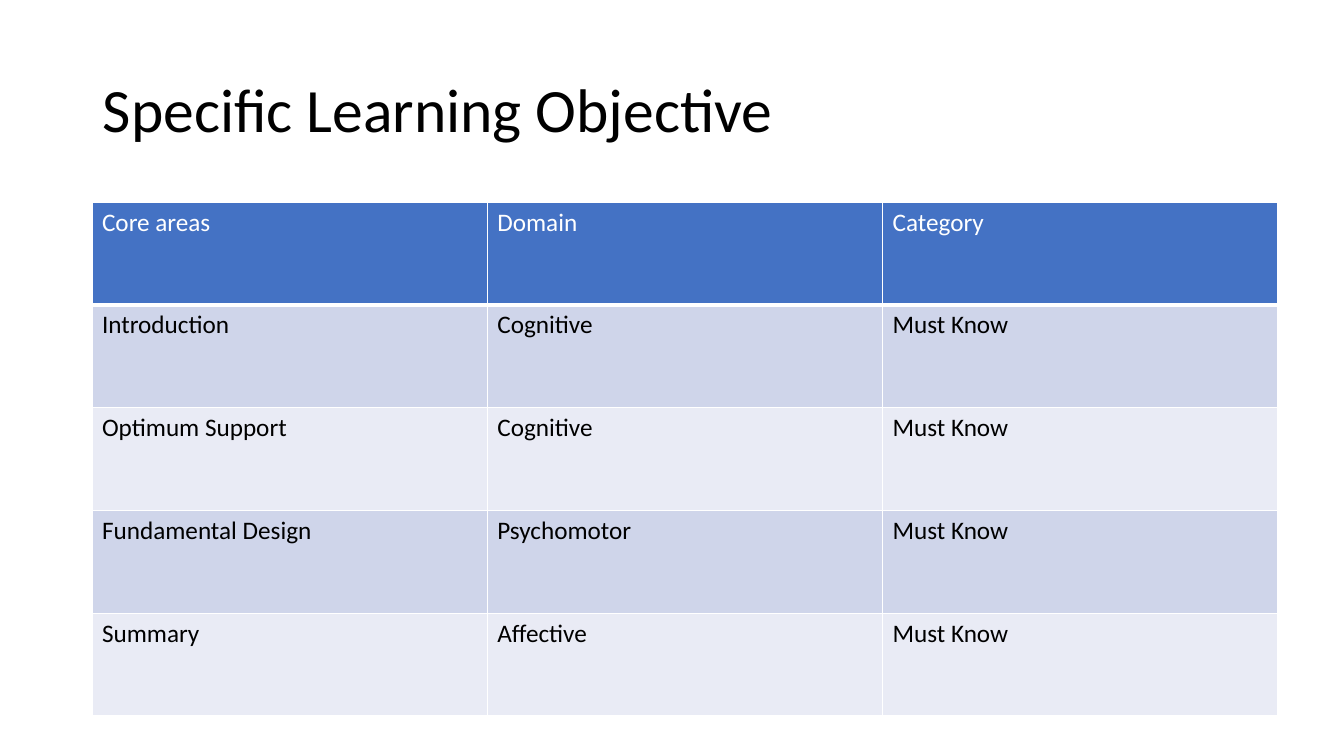
import dataclasses

import pptx
import pptx.dml.color
import pptx.enum.text
import pptx.oxml
import pptx.oxml.ns
import pptx.util

SCALE = 914400 / 100.8  # EMU in one px


@dataclasses.dataclass(frozen=True)
class Theme:
    font: str = "Calibri"
    ink: str = "000000"
    paper: str = "FFFFFF"
    head: str = "4472C4"
    bands: tuple = ("CFD5EA", "E9EBF5")
    title: int = 44
    body: int = 18
    thin: int = 1
    thick: int = 3


def emu(px):
    return pptx.util.Emu(round(px * SCALE))


def rgb(code):
    return pptx.dml.color.RGBColor.from_string(code)


class Deck:
    def __init__(self, theme, width, height):
        self.theme = theme
        self.prs = pptx.Presentation()
        self.prs.slide_width, self.prs.slide_height = emu(width), emu(height)
        self.slide = self.prs.slides.add_slide(self.prs.slide_layouts[6])

    def add_text(self, para, text, size, color):
        run = para.add_run()
        run.text = text
        font = run.font
        font.name, font.size, font.bold = self.theme.font, pptx.util.Pt(size), False
        font.color.rgb = rgb(color)

    def title(self, text, *box):
        frame = self.slide.shapes.add_textbox(*map(emu, box)).text_frame
        frame.word_wrap = True
        frame.vertical_anchor = pptx.enum.text.MSO_ANCHOR.MIDDLE
        para = frame.paragraphs[0]
        para.line_spacing = 0.9
        self.add_text(para, text, self.theme.title, self.theme.ink)

    def edge(self, cell, side, width):
        """Rule one side (L, R, T or B) of a cell, before its fill is set."""
        space = pptx.oxml.ns.nsdecls("a")
        line = pptx.oxml.parse_xml(
            f'<a:ln{side} {space} w="{pptx.util.Pt(width)}"><a:solidFill>'
            f'<a:srgbClr val="{self.theme.paper}"/></a:solidFill></a:ln{side}>'
        )
        cell._tc.get_or_add_tcPr().append(line)

    def cell(self, cell, text, row):
        theme = self.theme
        head = row == 0
        for side in "LRTB":
            self.edge(cell, side, theme.thick if head and side == "B" else theme.thin)
        cell.fill.solid()
        cell.fill.fore_color.rgb = rgb(theme.head if head else theme.bands[(row - 1) % 2])
        color = theme.paper if head else theme.ink
        self.add_text(cell.text_frame.paragraphs[0], text, theme.body, color)

    def table(self, rows, *box):
        shape = self.slide.shapes.add_table(len(rows), len(rows[0]), *map(emu, box))
        for i, row in enumerate(rows):
            for j, text in enumerate(row):
                self.cell(shape.table.cell(i, j), text, i)


def main():
    deck = Deck(Theme(), 1344, 756)
    deck.title("Specific Learning Objective", 93, 40, 1159, 146)
    rows = [
        ("Core areas", "Domain", "Category"),
        ("Introduction", "Cognitive", "Must Know"),
        ("Optimum Support", "Cognitive", "Must Know"),
        ("Fundamental Design", "Psychomotor", "Must Know"),
        ("Summary", "Affective", "Must Know"),
    ]
    deck.table(rows, 92, 202, 1186, 514)
    deck.prs.save("out.pptx")


if __name__ == "__main__":
    main()
